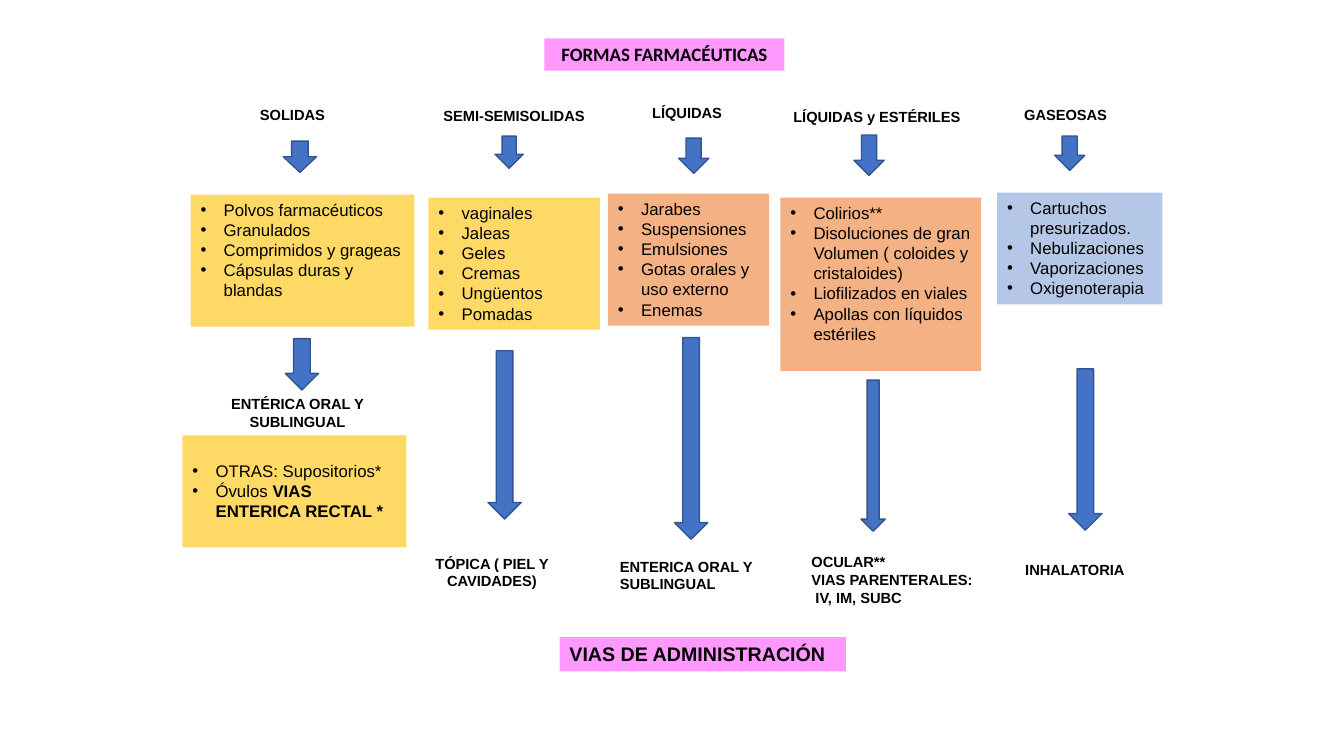
from dataclasses import dataclass

from lxml.etree import SubElement
from pptx import Presentation
from pptx.dml.color import RGBColor
from pptx.enum.shapes import MSO_SHAPE
from pptx.enum.text import MSO_ANCHOR, PP_ALIGN
from pptx.oxml.ns import qn
from pptx.util import Inches, Pt

Rect = tuple[float, float, float, float]

PINK, GOLD, PEACH, SKY = "FF99FF", "FFD966", "F4B183", "B4C7E7"
BLUE, NAVY, BLACK = "4472C4", "325491", "000000"


@dataclass
class Label:
    text: str
    at: Rect
    center: bool = False


@dataclass
class Panel:
    at: Rect
    fill: str
    items: list[str]
    top: float = 0.05


@dataclass
class Column:
    head: Label
    short: Rect
    panel: Panel
    long: Rect
    route: Label


COLUMNS = [
    Column(
        Label("SOLIDAS", (2.48, 1, 0.98, 0.28)),
        (2.81, 1.4, 0.33, 0.31),
        Panel((1.89, 1.93, 2.22, 1.31), GOLD,
              ["Polvos farmacéuticos", "Granulados",
               "Comprimidos y grageas", "Cápsulas duras y blandas"]),
        (2.83, 3.36, 0.33, 0.51),
        Label("ENTÉRICA ORAL Y SUBLINGUAL", (2.14, 3.87, 1.62, 0.45), True),
    ),
    Column(
        Label("SEMI-SEMISOLIDAS", (4.3, 1.01, 2.22, 0.28)),
        (4.91, 1.35, 0.28, 0.32),
        Panel((4.25, 1.96, 1.7, 1.31), GOLD,
              ["vaginales", "Jaleas", "Geles", "Cremas", "Ungüentos",
               "Pomadas"]),
        (4.84, 3.48, 0.33, 1.67),
        Label("TÓPICA ( PIEL Y CAVIDADES)", (3.78, 5.45, 2.2, 0.45), True),
    ),
    Column(
        Label("LÍQUIDAS", (6.37, 0.98, 0.99, 0.28)),
        (6.73, 1.37, 0.3, 0.35),
        Panel((6.03, 1.92, 1.6, 1.31), PEACH,
              ["Jarabes", "Suspensiones", "Emulsiones",
               "Gotas orales y uso externo", "Enemas"]),
        (6.69, 3.35, 0.33, 2),
        Label("ENTERICA ORAL Y SUBLINGUAL", (6.05, 5.48, 1.74, 0.45)),
    ),
    Column(
        Label("LÍQUIDAS y ESTÉRILES", (7.77, 1.02, 1.93, 0.28)),
        (8.47, 1.34, 0.3, 0.4),
        Panel((7.74, 1.96, 1.99, 1.72), PEACH,
              ["Colirios**",
               "Disoluciones de gran Volumen ( coloides y cristaloides)",
               "Liofilizados en viales", "Apollas con líquidos estériles"]),
        (8.54, 3.77, 0.24, 1.5),
        Label("OCULAR**\nVIAS PARENTERALES:\n IV, IM, SUBC",
              (7.95, 5.44, 2.1, 0.63)),
    ),
    Column(
        Label("GASEOSAS", (10.06, 1, 1.09, 0.28)),
        (10.46, 1.35, 0.3, 0.34),
        Panel((9.89, 1.91, 1.64, 1.11), SKY,
              ["Cartuchos presurizados.", "Nebulizaciones", "Vaporizaciones",
               "Oxigenoterapia"]),
        (10.6, 3.66, 0.33, 1.6),
        Label("INHALATORIA", (10.07, 5.51, 1.35, 0.28)),
    ),
]
RECTAL = Panel((1.81, 4.32, 2.22, 1.11), GOLD,
               ["OTRAS: Supositorios*", "Óvulos| VIAS ENTERICA RECTAL *"],
               top=0.25)

deck = Presentation()
deck.slide_width, deck.slide_height = Inches(13.33), Inches(7.5)
slide = deck.slides.add_slide(deck.slide_layouts[6])


def color(code: str) -> RGBColor:
    return RGBColor.from_string(code)


def write(shape, text: str, *, size: float, bold: bool = False,
          font: str = "Arial", center: bool = False, bullet: bool = False,
          top: float = 0.05, anchor=MSO_ANCHOR.TOP) -> None:
    """Fill a shape with one paragraph per line; "|" switches bold."""
    frame = shape.text_frame
    frame.word_wrap = True
    frame.vertical_anchor = anchor
    frame.margin_top = Inches(top)
    for i, line in enumerate(text.split("\n")):
        para = frame.paragraphs[0] if i == 0 else frame.add_paragraph()
        para.alignment = PP_ALIGN.CENTER if center else PP_ALIGN.LEFT
        if bullet:
            props = para._p.get_or_add_pPr()
            props.set("marL", str(Inches(0.23)))
            props.set("indent", str(Inches(-0.23)))
            SubElement(props, qn("a:buFont")).set("typeface", "Arial")
            SubElement(props, qn("a:buChar")).set("char", "•")
        for j, part in enumerate(line.split("|")):
            run = para.add_run()
            run.text = part
            run.font.name = font
            run.font.size = Pt(size)
            run.font.bold = bold != (j % 2 == 1)
            run.font.color.rgb = color(BLACK)


def block(kind: MSO_SHAPE, at: Rect, fill: str, line: str | None = None):
    shape = slide.shapes.add_shape(kind, *map(Inches, at))
    shape.shadow.inherit = False
    shape.fill.solid()
    shape.fill.fore_color.rgb = color(fill)
    if line:
        shape.line.color.rgb = color(line)
        shape.line.width = Pt(1)
    else:
        shape.line.fill.background()
    return shape


def arrow(at: Rect) -> None:
    block(MSO_SHAPE.DOWN_ARROW, at, BLUE, NAVY)


def label(item: Label) -> None:
    box = slide.shapes.add_textbox(*map(Inches, item.at))
    write(box, item.text, size=10.5, bold=True, center=item.center)


def panel(item: Panel) -> None:
    box = block(MSO_SHAPE.RECTANGLE, item.at, item.fill)
    write(box, "\n".join(item.items), size=12, bullet=True, top=item.top)


def main() -> None:
    title = block(MSO_SHAPE.RECTANGLE, (5.4, 0.38, 2.38, 0.32), PINK)
    write(title, "FORMAS FARMACÉUTICAS", size=13.5, bold=True,
          font="Calibri", center=True, anchor=MSO_ANCHOR.MIDDLE)
    for col in COLUMNS:
        label(col.head)
        arrow(col.short)
        panel(col.panel)
        arrow(col.long)
        label(col.route)
    panel(RECTAL)
    foot = block(MSO_SHAPE.RECTANGLE, (5.55, 6.32, 2.84, 0.34), PINK)
    write(foot, "VIAS DE ADMINISTRACIÓN", size=14, bold=True)
    deck.save("out.pptx")


if __name__ == "__main__":
    main()
